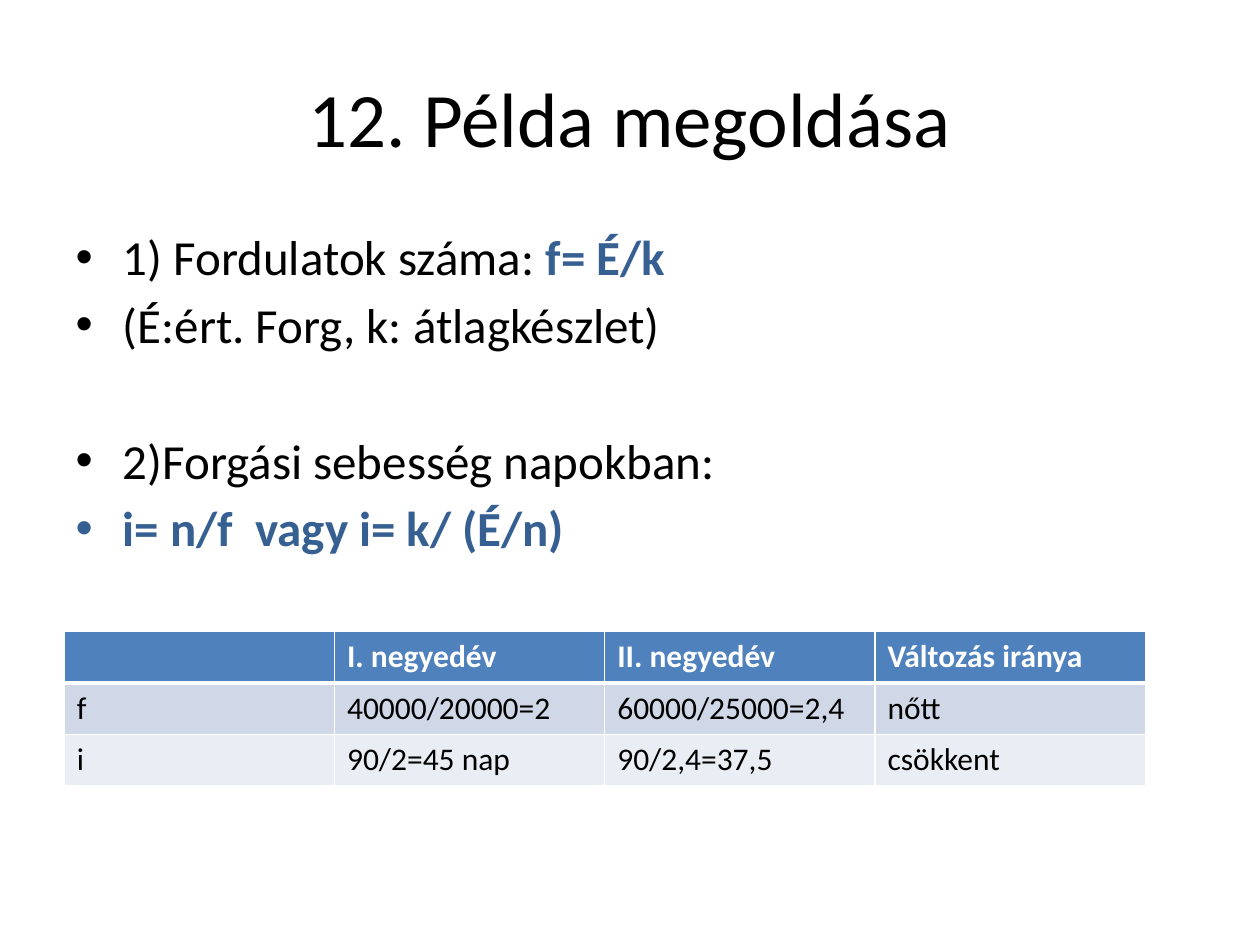
from dataclasses import dataclass

from lxml import etree
from pptx import Presentation
from pptx.dml.color import RGBColor
from pptx.enum.text import MSO_ANCHOR, MSO_AUTO_SIZE, PP_ALIGN
from pptx.oxml.ns import qn
from pptx.util import Inches, Pt

MIDDLE = MSO_ANCHOR.MIDDLE
NO_FIT = MSO_AUTO_SIZE.NONE
CENTER = PP_ALIGN.CENTER
FONT = "Calibri"
COLORS = {
    "text": "000000",
    "formula": "376092",
    "white": "FFFFFF",
    "header": "4F81BD",
    "band_dark": "D0D8E8",
    "band_light": "E9EDF4",
}


@dataclass
class Bullet:
    text: str = ""
    formula: str = ""
    before: float = 5


@dataclass
class Row:
    cells: tuple
    fill: str
    color: str = "text"
    bold: bool = False
    top: float = 1
    bottom: float = 1


BULLETS = [
    Bullet("1) Fordulatok száma: ", "f= É/k", before=0),
    Bullet("(É:ért. Forg, k: átlagkészlet)"),
    Bullet("2)Forgási sebesség napokban:", before=44),
    Bullet(formula="i= n/f  vagy i= k/ (É/n)"),
]
ROWS = [
    Row(("", "I. negyedév", "II. negyedév", "Változás iránya"),
        "header", color="white", bold=True, bottom=3),
    Row(("f", "40000/20000=2", "60000/25000=2,4", "nőtt"), "band_dark", top=3),
    Row(("i", "90/2=45 nap", "90/2,4=37,5", "csökkent"), "band_light"),
]


def rgb(name: str) -> RGBColor:
    return RGBColor.from_string(COLORS[name])


def add_text(p, text: str, *, size: float, color: str = "text", bold: bool = False) -> None:
    if not text:
        return
    r = p.add_run()
    r.text = text
    r.font.name = FONT
    r.font.size = Pt(size)
    r.font.bold = bold
    r.font.color.rgb = rgb(color)


def place(sp, left: float, top: float, width: float, height: float) -> None:
    sp.left, sp.top = Inches(left), Inches(top)
    sp.width, sp.height = Inches(width), Inches(height)


def add_borders(cell, top: float, bottom: float) -> None:
    tc_pr = cell._tc.get_or_add_tcPr()
    for side, width in (("L", 1), ("R", 1), ("T", top), ("B", bottom)):
        ln = etree.SubElement(tc_pr, qn(f"a:ln{side}"), w=str(Pt(width)))
        fill = etree.SubElement(ln, qn("a:solidFill"))
        etree.SubElement(fill, qn("a:srgbClr"), val=COLORS["white"])


def add_title(slide, text: str) -> None:
    title = slide.shapes.title
    place(title, 0.5, 0.3, 9, 1.25)
    tf = title.text_frame
    tf.vertical_anchor = MIDDLE
    p = tf.paragraphs[0]
    p.alignment = CENTER
    add_text(p, text, size=44)


def add_bullets(slide, bullets: list[Bullet]) -> None:
    body = slide.placeholders[1]
    place(body, 0.5, 1.75, 9, 1.53)
    tf = body.text_frame
    tf.auto_size = NO_FIT
    for i, bullet in enumerate(bullets):
        p = tf.add_paragraph() if i else tf.paragraphs[0]
        p.space_before = Pt(bullet.before)
        add_text(p, bullet.text, size=28)
        add_text(p, bullet.formula, size=28, color="formula", bold=True)


def add_results(slide, rows: list[Row]) -> None:
    columns = len(rows[0].cells)
    col_width, row_height = 2.145, 0.41
    table = slide.shapes.add_table(
        len(rows), columns, Inches(0.51), Inches(5.01),
        Inches(col_width * columns), Inches(row_height * len(rows))).table
    for r, row in enumerate(rows):
        for c, text in enumerate(row.cells):
            cell = table.cell(r, c)
            add_borders(cell, row.top, row.bottom)
            cell.fill.solid()
            cell.fill.fore_color.rgb = rgb(row.fill)
            add_text(cell.text_frame.paragraphs[0], text, size=18,
                     color=row.color, bold=row.bold)


def main() -> None:
    prs = Presentation()
    prs.slide_width, prs.slide_height = Inches(10), Inches(7.5)
    slide = prs.slides.add_slide(prs.slide_layouts[1])
    add_title(slide, "12. Példa megoldása")
    add_bullets(slide, BULLETS)
    add_results(slide, ROWS)
    prs.save("out.pptx")


if __name__ == "__main__":
    main()
